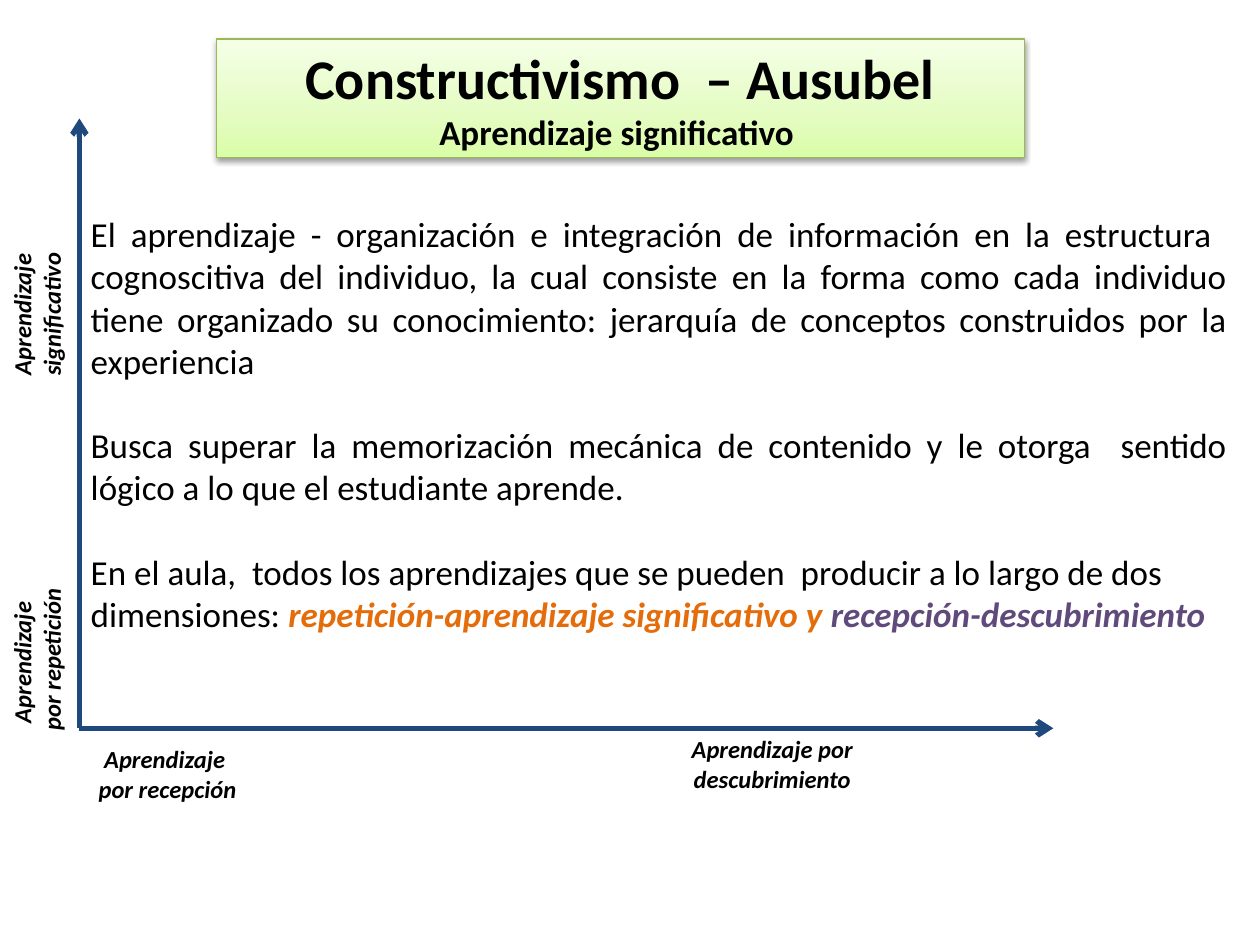
from dataclasses import dataclass

from lxml import etree
from pptx import Presentation
from pptx import util as u
from pptx.dml.color import RGBColor
from pptx.enum import shapes, text
from pptx.oxml import parse_xml
from pptx.oxml.ns import nsdecls, qn

COLUMNS, ROWS = 100, 75
CELL = u.Inches(0.1)
CENTER, LEFT, JUSTIFY = text.PP_ALIGN.CENTER, text.PP_ALIGN.LEFT, text.PP_ALIGN.JUSTIFY


@dataclass(frozen=True)
class Theme:
    """Colours, font and type sizes of the slide."""
    font: str = "Calibri"
    ink: str = "000000"
    axis: str = "1F497D"
    orange: str = "E46C0A"
    purple: str = "604A7B"
    banner_line: str = "98B955"
    banner_stops: tuple = ((0, "DAFDA7"), (35, "E4FCC2"), (100, "F5FFE7"))
    title: int = 32
    body: int = 20
    label: int = 14
    axis_width: int = 3
    gap: float = 24.4


THEME = Theme()


def grid(*cells):
    """Turn grid cells into slide lengths."""
    return [u.Emu(round(cell * CELL)) for cell in cells]


def place(box, area):
    """Move a box to an area of the grid."""
    box.left, box.top, box.width, box.height = grid(*area)


def apply(target, values):
    """Set attributes from a dict of format values."""
    for name, value in values.items():
        setattr(target, name, value)


def write(box, paragraphs, anchor=text.MSO_ANCHOR.TOP):
    """Fill a box with (paragraph format, spans) pairs."""
    frame = box.text_frame
    apply(frame, {"word_wrap": True, "auto_size": text.MSO_AUTO_SIZE.NONE,
                  "vertical_anchor": anchor})
    for index, (layout, spans) in enumerate(paragraphs):
        para = frame.add_paragraph() if index else frame.paragraphs[0]
        apply(para, {"space_before": u.Pt(0), **layout})
        for words, size, color, style in spans:
            span = para.add_run()
            span.text = words
            apply(span.font, {"name": THEME.font, "size": u.Pt(size), **style})
            span.font.color.rgb = RGBColor.from_string(color)


def remove_bullets(box):
    """Drop the bullets and hanging indents of a list."""
    for para in box.text_frame.paragraphs:
        properties = para._p.get_or_add_pPr()
        properties.set("marL", "0")
        properties.set("indent", "0")
        etree.SubElement(properties, qn("a:buNone"))


def style_banner(box):
    """Give a box rounded corners, a gradient, an outline and a shadow."""
    stops = "".join(
        f'<a:gs pos="{share * 1000}"><a:srgbClr val="{color}"/></a:gs>'
        for share, color in THEME.banner_stops)
    parts = (
        '<a:prstGeom {} prst="roundRect"><a:avLst/></a:prstGeom>',
        '<a:gradFill {} rotWithShape="1"><a:gsLst>' + stops
        + '</a:gsLst><a:lin ang="16200000" scaled="1"/></a:gradFill>',
        '<a:effectLst {}><a:outerShdw blurRad="40000" dist="20000" dir="5400000" '
        'rotWithShape="0"><a:srgbClr val="000000"><a:alpha val="38000"/>'
        '</a:srgbClr></a:outerShdw></a:effectLst>')
    for part in parts:
        box._element.spPr.append(parse_xml(part.format(nsdecls("a"))))
    box.line.color.rgb = RGBColor.from_string(THEME.banner_line)
    box.line.width = u.Pt(0.75)


def add_label(page, area, lines, rotation=0):
    """Add a bold italic axis label."""
    box = page.shapes.add_textbox(*grid(*area))
    box.rotation = rotation
    style = {"bold": True, "italic": True}
    write(box, [({"alignment": CENTER}, [(line, THEME.label, THEME.ink, style)])
                for line in lines])


def add_axis(page, start, end):
    """Add an axis that ends in an open arrowhead."""
    axis = page.shapes.add_connector(shapes.MSO_CONNECTOR.STRAIGHT, *grid(*start, *end))
    axis.line.color.rgb = RGBColor.from_string(THEME.axis)
    axis.line.width = u.Pt(THEME.axis_width)
    etree.SubElement(axis.line._get_or_add_ln(), qn("a:tailEnd"), type="arrow")
    etree.SubElement(axis._element.spPr, qn("a:effectLst"))


def fill_title(box):
    """Write the title banner."""
    place(box, (17.2, 3.1, 64.1, 9.4))
    style_banner(box)
    lines = (("Constructivismo  – Ausubel", THEME.title),
             ("Aprendizaje significativo ", THEME.body))
    write(box, [({"alignment": CENTER}, [(words, size, THEME.ink, {"bold": True})])
                for words, size in lines], text.MSO_ANCHOR.MIDDLE)


def fill_body(box):
    """Write the explanation of meaningful learning."""
    place(box, (6.2, 16.4, 92.2, 54.9))
    strong = {"bold": True, "italic": True}
    passages = (
        (JUSTIFY, [("El aprendizaje - organización e integración de información en la "
                    "estructura  cognoscitiva del individuo, la cual consiste en la forma "
                    "como cada individuo tiene organizado su conocimiento: jerarquía de "
                    "conceptos construidos por la experiencia ", THEME.ink, {})]),
        (JUSTIFY, [("Busca superar la memorización mecánica de contenido y le otorga  "
                    "sentido lógico a lo que el estudiante aprende.", THEME.ink, {})]),
        (LEFT, [("En el aula,  todos los aprendizajes que se pueden  producir a lo largo "
                 "de dos dimensiones: ", THEME.ink, {}),
                ("repetición-aprendizaje significativo y ", THEME.orange, strong),
                ("recepción-descubrimiento", THEME.purple, strong)]))
    write(box, [({"alignment": side, "space_after": u.Pt(THEME.gap)},
                 [(words, THEME.body, color, style) for words, color, style in spans])
                for side, spans in passages])
    remove_bullets(box)


def main():
    """Build the slide and save it."""
    deck = Presentation()
    deck.slide_width, deck.slide_height = grid(COLUMNS, ROWS)
    page = deck.slides.add_slide(deck.slide_layouts[1])
    title, body = page.placeholders
    fill_title(title)
    fill_body(body)

    width, height = 17.2, 5.7
    add_label(page, (-5.7, 49.5, width, height), ["Aprendizaje ", "por repetición"], 270)
    add_label(page, (4.7, 58.6, width, height), ["Aprendizaje ", "por recepción"])
    add_label(page, (50, 57.8, 22.6, height), ["Aprendizaje por descubrimiento"])
    add_label(page, (-5.7, 22.1, width, height), ["Aprendizaje significativo"], 270)

    origin = (6.3, 57.8)
    for end in ((6.3, 9.4), (83.6, 57.8)):
        add_axis(page, origin, end)
    deck.save("out.pptx")


if __name__ == "__main__":
    main()
